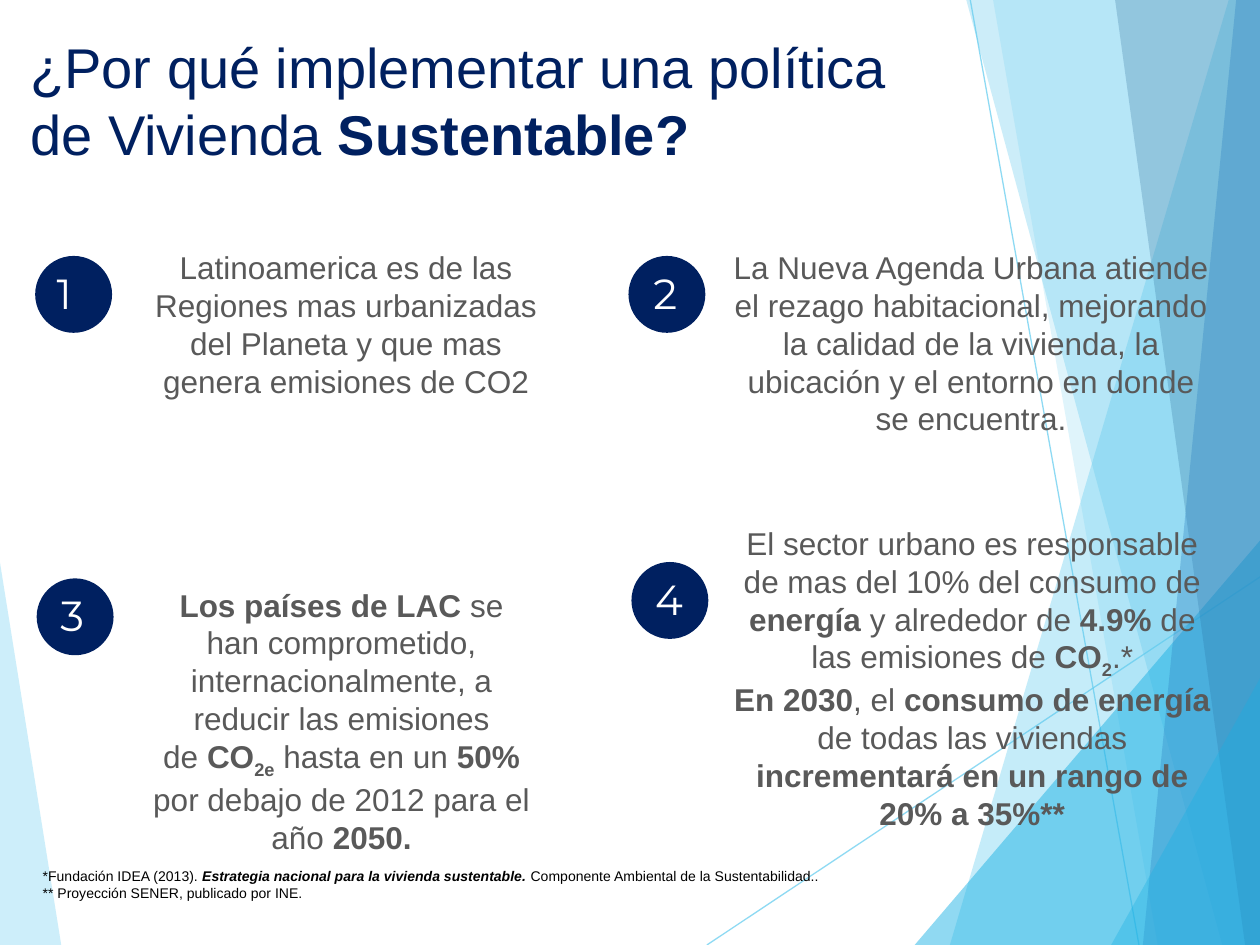
"""Builds the slide on why to implement a sustainable housing policy."""
from dataclasses import dataclass

from lxml.etree import SubElement
from pptx import Presentation
from pptx.dml.color import RGBColor
from pptx.enum.shapes import MSO_CONNECTOR, MSO_SHAPE
from pptx.enum.text import MSO_AUTO_SIZE, PP_ALIGN
from pptx.oxml.ns import qn
from pptx.util import Cm, Pt

WIDTH, HEIGHT = 25.4, 19.05
NAVY, GREY, BLACK, WHITE = "002060", "595959", "000000", "FFFFFF"
SKY, CYAN, BLUE, TEAL = "5FCBEF", "17B0E4", "2E83C3", "226292"
BADGE_SIZE = 1.55


@dataclass(frozen=True)
class Facet:
    """A translucent backdrop piece: two points make a line, more an area."""
    color: str
    alpha: int
    points: tuple


@dataclass(frozen=True)
class Reason:
    """A numbered badge with its digit inset and its text box."""
    badge: tuple
    inset: float
    box: tuple
    paragraphs: tuple


FACETS = (
    Facet(CYAN, 22, ((19.48, 0), (24.64, HEIGHT), (25.43, HEIGHT), (25.43, 0))),
    Facet(SKY, 31, ((-0.03, 11.15), (1.24, 19.08), (-0.03, HEIGHT))),
    Facet(SKY, 70, ((14.25, HEIGHT), (25.43, 11.61))),
    Facet(SKY, 70, ((19.56, 0), (22.96, HEIGHT))),
    Facet(SKY, 36, ((24.77, 0), (19.15, HEIGHT), (25.45, HEIGHT), (25.43, 0))),
    Facet(SKY, 20, ((20.02, 0), (23.34, HEIGHT), (25.43, HEIGHT), (25.43, 0))),
    Facet(CYAN, 48, ((18.44, HEIGHT), (25.4, 10.9), (25.43, HEIGHT))),
    Facet(TEAL, 24, ((22.48, 0), (25.1, HEIGHT), (25.45, HEIGHT), (25.4, 0))),
    Facet(BLUE, 34, ((24.92, 0), (23.04, HEIGHT), (25.43, HEIGHT), (25.4, 0))),
    Facet(CYAN, 34, ((22.4, HEIGHT), (25.45, 13.59), (25.45, HEIGHT))),
)

TITLE = ((("¿Por qué implementar una política de Vivienda ", ""), ("Sustentable?", "b")),)

REASONS = (
    Reason((0.71, 5.16), 0.18, (2.77, 4.88, 8.41, 3.33), (
        (("Latinoamerica es de las Regiones mas urbanizadas del Planeta "
          "y que mas genera emisiones de CO2", ""),),
    )),
    Reason((12.67, 5.16), 0.25, (14.48, 4.88, 10.19, 4.11), (
        (("La Nueva Agenda Urbana atiende el rezago habitacional, mejorando la calidad "
          "de la vivienda, la ubicación y el entorno en donde se encuentra.", ""),),
    )),
    Reason((0.74, 11.66), 0.23, (2.77, 11.68, 8.23, 5.64), (
        (("Los países de LAC", "b"),
         (" se han comprometido, internacionalmente, a reducir las emisiones", "")),
        (("de ", ""), ("CO", "b"), ("2e", "b_"), (" hasta en un ", ""), ("50%", "b"),
         (" por debajo de 2012 para el año ", ""), ("2050.", "b")),
    )),
    Reason((12.73, 11.33), 0.23, (14.48, 10.44, 10.24, 6.4), (
        (("El sector urbano es responsable de mas del 10% del consumo de ", ""),
         ("energía", "b"), (" y alrededor de ", ""), ("4.9% ", "b"),
         ("de las emisiones de ", ""), ("CO", "b"), ("2", "b_"), (".*", "")),
        (("En 2030", "b"), (", el ", ""), ("consumo de energía ", "b"),
         ("de todas las viviendas ", ""),
         ("incrementará en un rango de 20% a 35%**", "b")),
    )),
)

NOTES = (
    (("*Fundación IDEA (2013). ", ""),
     ("Estrategia nacional para la vivienda sustentable. ", "bi"),
     ("Componente Ambiental de la Sustentabilidad..", "")),
    (("** Proyección SENER, publicado por INE.", ""),),
)


def paint(fill, color: str, alpha: int = 100) -> None:
    """Apply a solid hex colour with an opacity in percent."""
    fill.solid()
    fill.fore_color.rgb = RGBColor.from_string(color)
    if alpha < 100:
        for node in fill._xPr.iter(qn("a:srgbClr")):
            SubElement(node, qn("a:alpha"), val=str(alpha * 1000))


def add_text(s, box: tuple, paragraphs: tuple, *, size: float, color: str,
             font: str = "Arial", align=PP_ALIGN.LEFT, wrap: bool = True) -> None:
    """Add a text box of styled runs: b is bold, i italic, _ subscript."""
    tf = s.shapes.add_textbox(*map(Cm, box)).text_frame
    tf.word_wrap = wrap
    tf.auto_size = MSO_AUTO_SIZE.SHAPE_TO_FIT_TEXT
    for i, runs in enumerate(paragraphs):
        p = tf.add_paragraph() if i else tf.paragraphs[0]
        p.alignment = align
        for text, style in runs:
            r = p.add_run()
            r.text = text
            r.font.name, r.font.size = font, Pt(size)
            r.font.bold, r.font.italic = "b" in style, "i" in style
            paint(r.font.fill, color)
            if "_" in style:
                r.font._element.set("baseline", "-25000")


def add_facet(s, facet: Facet) -> None:
    """Draw a backdrop line or area."""
    points = [(Cm(x), Cm(y)) for x, y in facet.points]
    if len(points) == 2:
        line = s.shapes.add_connector(MSO_CONNECTOR.STRAIGHT, *points[0], *points[1])
        line.line.width = Pt(0.75)
        paint(line.line.fill, facet.color, facet.alpha)
        SubElement(line._element.spPr, qn("a:effectLst"))
        return
    builder = s.shapes.build_freeform(*points[0], scale=1.0)
    builder.add_line_segments(points[1:], close=True)
    sp = builder.convert_to_shape()
    sp.shadow.inherit = False
    sp.line.fill.background()
    paint(sp.fill, facet.color, facet.alpha)


def add_reason(s, number: int, reason: Reason) -> None:
    """Draw a numbered badge and the text next to it."""
    x, y = reason.badge
    sp = s.shapes.add_shape(MSO_SHAPE.OVAL, *map(Cm, (x, y, BADGE_SIZE, BADGE_SIZE)))
    sp.shadow.inherit = False
    sp.line.fill.background()
    paint(sp.fill, NAVY)
    add_text(s, (x + reason.inset, y + 0.1, 1.09, 1.28), (((str(number), ""),),),
             size=24, color=WHITE, font="Montserrat", wrap=False)
    add_text(s, reason.box, reason.paragraphs, size=18, color=GREY, align=PP_ALIGN.CENTER)


def main() -> None:
    """Build and save the slide."""
    prs = Presentation()
    prs.slide_width, prs.slide_height = Cm(WIDTH), Cm(HEIGHT)
    s = prs.slides.add_slide(prs.slide_layouts[6])
    for facet in FACETS:
        add_facet(s, facet)
    for number, reason in enumerate(REASONS, 1):
        add_reason(s, number, reason)
    add_text(s, (0.61, 17.37, 19.18, 0.94), NOTES, size=8, color=BLACK)
    add_text(s, (0.36, 0.53, 19.25, 3), TITLE, size=32, color=NAVY)
    prs.save("out.pptx")


if __name__ == "__main__":
    main()
